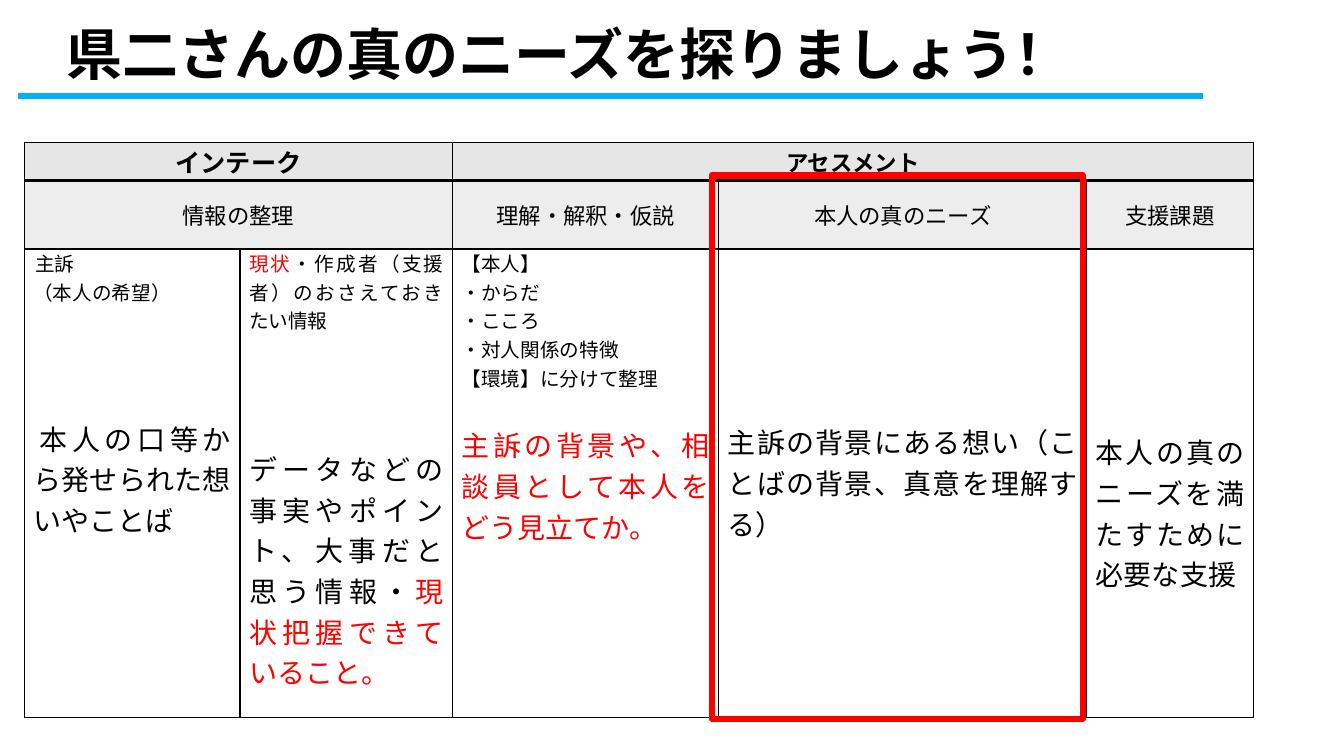
from lxml.etree import SubElement
from pptx import Presentation
from pptx.dml.color import RGBColor
from pptx.enum.shapes import MSO_CONNECTOR as Connector, MSO_SHAPE as Shape
from pptx.enum.text import MSO_ANCHOR as Anchor, MSO_AUTO_SIZE as AutoSize, PP_ALIGN as Align
from pptx.oxml.ns import qn
from pptx.util import Inches, Pt

BLACK, RED, BLUE = "000000", "FF0000", "00B0F0"
HEAD_GREY, SUBHEAD_GREY = "E7E6E6", "EDEDED"


def color(hex_code):
    return RGBColor.from_string(hex_code)


class NeedsSlide:
    font = "Noto Sans CJK JP"

    def __init__(self, deck):
        self.slide = deck.slides.add_slide(deck.slide_layouts[5])

    def add_run(self, paragraph, text, size, hex_code=BLACK, bold=False):
        run = paragraph.add_run()
        run.text = text
        run.font.size = Pt(size)
        run.font.bold = bold
        run.font.color.rgb = color(hex_code)
        run.font.name = self.font
        east_asian = run.font._element.makeelement(qn("a:ea"), typeface=self.font)
        run.font._element.find(qn("a:latin")).addnext(east_asian)

    def title(self, text, left, top, width, height, indent):
        heading = self.slide.shapes.title
        heading.left, heading.top = Inches(left), Inches(top)
        heading.width, heading.height = Inches(width), Inches(height)
        frame = heading.text_frame
        frame.auto_size = AutoSize.NONE
        frame.vertical_anchor = Anchor.MIDDLE
        frame.margin_left = Inches(indent)
        paragraph = frame.paragraphs[0]
        paragraph.alignment = Align.LEFT
        paragraph.line_spacing = 0.9
        self.add_run(paragraph, text, 40, bold=True)

    def rule(self, left, right, y, hex_code, weight):
        underline = self.slide.shapes.add_connector(
            Connector.STRAIGHT, Inches(left), Inches(y), Inches(right), Inches(y))
        underline.line.color.rgb = color(hex_code)
        underline.line.width = Pt(weight)
        SubElement(underline._element.spPr, qn("a:effectLst"))

    def frame(self, left, top, width, height, hex_code, weight):
        highlight = self.slide.shapes.add_shape(
            Shape.RECTANGLE, Inches(left), Inches(top), Inches(width), Inches(height))
        highlight.shadow.inherit = False
        highlight.fill.background()
        highlight.line.color.rgb = color(hex_code)
        highlight.line.width = Pt(weight)

    def table(self, left, top, widths, heights):
        grid = self.slide.shapes.add_table(
            len(heights), len(widths), Inches(left), Inches(top),
            Inches(sum(widths)), Inches(sum(heights))).table
        grid.first_row = grid.horz_banding = False
        for column, width in zip(grid.columns, widths):
            column.width = Inches(width)
        for row, height in zip(grid.rows, heights):
            row.height = Inches(height)
        for cell in grid.iter_cells():
            cell.margin_left = cell.margin_right = Inches(0.09)
            cell.margin_top = cell.margin_bottom = 0
            cell.fill.background()
        return grid

    def borders(self, cell, top=1, bottom=1):
        sides = {"lnL": 1, "lnR": 1, "lnT": top, "lnB": bottom}
        properties = cell._tc.get_or_add_tcPr()
        for place, (side, weight) in enumerate(sides.items()):
            edge = properties.makeelement(qn(f"a:{side}"), w=str(Pt(weight)))
            fill = SubElement(edge, qn("a:solidFill"))
            SubElement(fill, qn("a:srgbClr"), val=BLACK)
            properties.insert(place, edge)

    def header(self, cell, text, size, grey, bold=False):
        cell.fill.solid()
        cell.fill.fore_color.rgb = color(grey)
        cell.vertical_anchor = Anchor.MIDDLE
        paragraph = cell.text_frame.paragraphs[0]
        paragraph.alignment = Align.CENTER
        self.add_run(paragraph, text, size, bold=bold)

    def body(self, cell, paragraphs, top=0):
        cell.margin_top = Inches(top)
        for index, (size, gap, indent, runs) in enumerate(paragraphs):
            text = cell.text_frame
            paragraph = text.add_paragraph() if index else text.paragraphs[0]
            paragraph.alignment = Align.JUSTIFY
            if gap:
                paragraph.space_before = Pt(gap)
            if indent:
                paragraph._p.get_or_add_pPr().set("indent", str(Inches(indent)))
            for words, hex_code in runs:
                self.add_run(paragraph, words, size, hex_code)


def main():
    deck = Presentation()
    deck.slide_width, deck.slide_height = Inches(13.33), Inches(7.5)
    needs = NeedsSlide(deck)
    needs.title("県二さんの真のニーズを探りましょう！", 0, 0, 11.97, 1.14, 0.66)
    needs.rule(0.18, 11.93, 0.95, BLUE, 4.5)

    process = needs.table(0.24, 1.41, [2.14, 2.11, 2.64, 3.65, 1.65], [0.38, 0.68, 4.65])
    for row, first, last in [(0, 0, 1), (0, 2, 4), (1, 0, 1)]:
        process.cell(row, first).merge(process.cell(row, last))

    for column, phase, size in [(0, "インテーク", 18), (2, "アセスメント", 16)]:
        needs.header(process.cell(0, column), phase, size, HEAD_GREY, bold=True)
    steps = {0: "情報の整理", 2: "理解・解釈・仮説", 3: "本人の真のニーズ", 4: "支援課題"}
    for column, step in steps.items():
        needs.header(process.cell(1, column), step, 16, SUBHEAD_GREY)

    viewpoints = ["【本人】", "・からだ", "・こころ", "・対人関係の特徴", "【環境】に分けて整理"]
    details = [
        (0, [(14, 0, 0.02, [("主訴", BLACK)]),
             (14, 0, 0, [("（本人の希望）", BLACK)]),
             (20, 79.6, 0.06, [("本人の口等から発せられた想いやことば", BLACK)])]),
        (0, [(14, 0, 0, [("現状", RED), ("・作成者（支援者）のおさえておきたい情報", BLACK)]),
             (20, 81, 0, [("データなどの事実やポイント、大事だと思う情報・", BLACK),
                          ("現状把握できていること。", RED)])]),
        (0, [(14, 0, 0, [(viewpoint, BLACK)]) for viewpoint in viewpoints]
            + [(20, 23.2, 0, [("主訴の背景や、相談員として本人をどう見立てか。", RED)])]),
        (1.71, [(20, 0, 0, [("主訴の背景にある想い（ことばの背景、真意を理解する）", BLACK)])]),
        (1.81, [(20, 0, 0, [("本人の真のニーズを満たすために必要な支援", BLACK)])]),
    ]
    for column, (top, paragraphs) in enumerate(details):
        needs.body(process.cell(2, column), paragraphs, top)
        needs.borders(process.cell(0, column), bottom=2)
        needs.borders(process.cell(1, column), top=2)
        needs.borders(process.cell(2, column))

    needs.frame(7.06, 1.74, 3.68, 5.39, RED, 4.5)
    deck.save("out.pptx")


if __name__ == "__main__":
    main()
